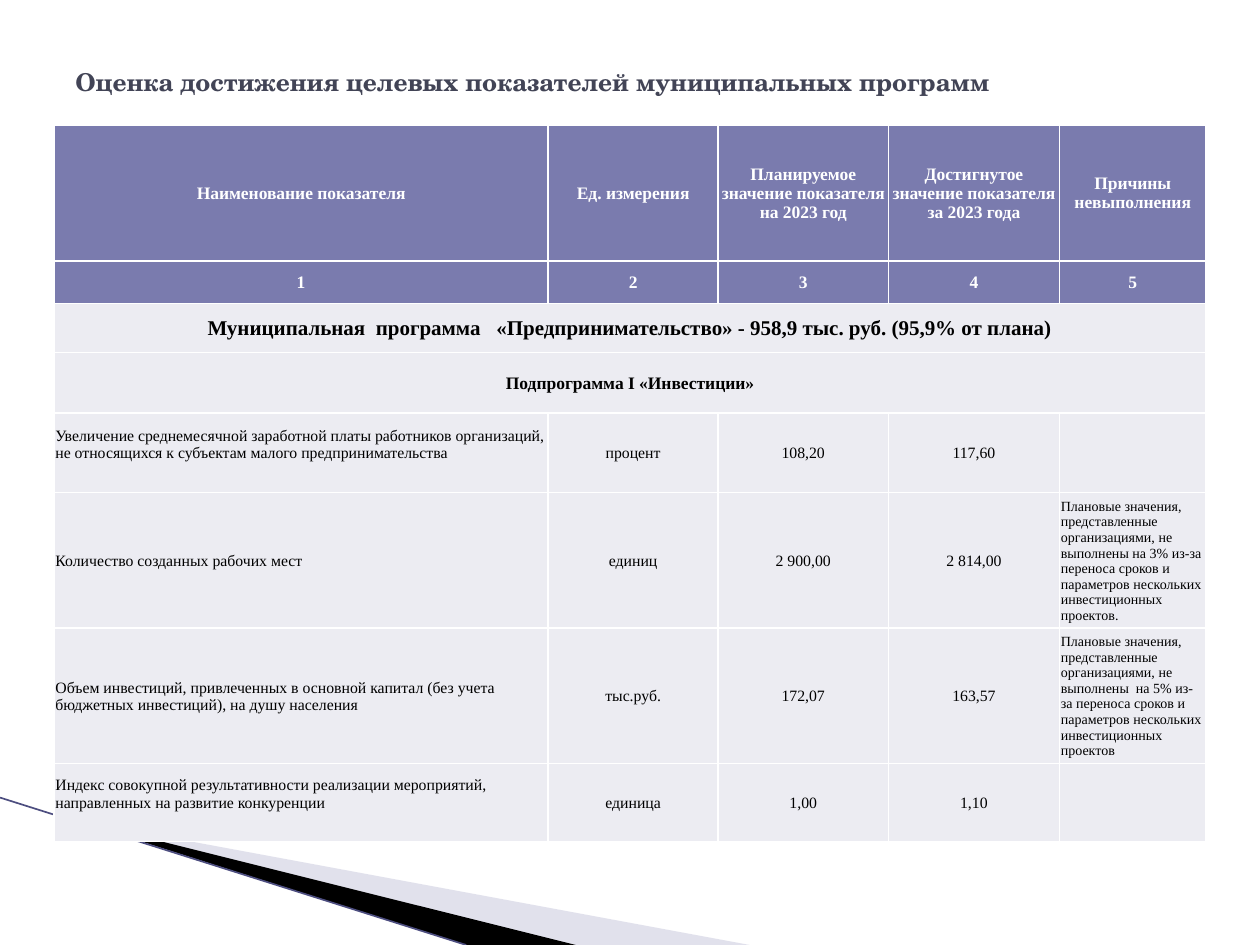
from lxml.etree import SubElement
from pptx import Presentation
from pptx.dml.color import RGBColor
from pptx.enum.text import MSO_ANCHOR, PP_ALIGN
from pptx.oxml.ns import qn
from pptx.util import Inches, Pt

COLORS = {
    "title": "424456",
    "header": "7A7BAE",
    "body": "ECECF2",
    "white": "FFFFFF",
    "black": "000000",
    "wedge": "B6B6D1",
    "edge": "4D4E80",
}
BODY_FONT = "Times New Roman"


def color(name):
    return RGBColor.from_string(COLORS[name])


def add_borders(cell):
    properties = cell._tc.get_or_add_tcPr()
    for side in ("a:lnL", "a:lnR", "a:lnT", "a:lnB"):
        line = SubElement(properties, qn(side), w=str(Pt(1)))
        fill = SubElement(line, qn("a:solidFill"))
        SubElement(fill, qn("a:srgbClr"), val=COLORS["white"])


presentation = Presentation()
presentation.slide_width = Inches(10)
presentation.slide_height = Inches(7.5)
slide = presentation.slides.add_slide(presentation.slide_layouts[6])

# Corner wedges
wedges = [
    ("wedge", 40, [(0.55, 6.5), (5.95, 7.5), (4.56, 7.5)]),
    ("black", 100, [(0.53, 6.49), (4.57, 7.5), (3.7, 7.5)]),
]
for fill_name, opacity, points in wedges:
    start, *others = [(Inches(x), Inches(y)) for x, y in points]
    builder = slide.shapes.build_freeform(*start)
    builder.add_line_segments(others)
    shape = builder.convert_to_shape()
    shape.shadow.inherit = False
    shape.line.fill.background()
    shape.fill.solid()
    shape.fill.fore_color.rgb = color(fill_name)
    if opacity < 100:
        fill_color = shape._element.spPr.find(".//" + qn("a:srgbClr"))
        SubElement(fill_color, qn("a:alpha"), val=str(opacity * 1000))

edge = slide.shapes.add_connector(1, 0, Inches(6.33), Inches(3.7), Inches(7.5))
edge.line.color.rgb = color("edge")
edge.line.width = Pt(0.95)
SubElement(edge._element.spPr, qn("a:effectLst"))

# Title
title = slide.shapes.add_textbox(Inches(0.5), Inches(0.3), Inches(9), Inches(0.69))
title.text_frame.word_wrap = True
title.text_frame.vertical_anchor = MSO_ANCHOR.MIDDLE
paragraph = title.text_frame.paragraphs[0]
paragraph.text = "Оценка достижения целевых показателей муниципальных программ"
paragraph.font.name = "TeX Gyre Schola"
paragraph.font.size = Pt(14)
paragraph.font.bold = True
paragraph.font.color.rgb = color("title")

# Indicator table
rows = [
    ["Наименование показателя", "Ед. измерения",
     "Планируемое значение показателя на 2023 год",
     "Достигнутое значение показателя за 2023 года", "Причины невыполнения"],
    ["1", "2", "3", "4", "5"],
    ["Муниципальная  программа   «Предпринимательство» - 958,9 тыс. руб. (95,9% от плана)"],
    ["Подпрограмма I «Инвестиции»"],
    ["Увеличение среднемесячной заработной платы работников организаций, "
     "не относящихся к субъектам малого предпринимательства",
     "процент", "108,20", "117,60", ""],
    ["Количество созданных рабочих мест", "единиц", "2 900,00", "2 814,00",
     "Плановые значения, представленные организациями, не выполнены на 3% из-за "
     "переноса сроков и параметров нескольких инвестиционных проектов."],
    ["Объем инвестиций, привлеченных в основной капитал (без учета бюджетных "
     "инвестиций), на душу населения", "тыс.руб.", "172,07", "163,57",
     "Плановые значения, представленные организациями, не выполнены  на 5% из-за "
     "переноса сроков и параметров нескольких инвестиционных проектов"],
    ["Индекс совокупной результативности реализации мероприятий, "
     "направленных на развитие конкуренции", "единица", "1,00", "1,10", ""],
]
column_widths = [3.92, 1.35, 1.35, 1.36, 1.16]
row_heights = [1.08, 0.34, 0.39, 0.48, 0.63, 1, 1, 0.62]
row_sizes = [10, 10, 12, 10, 9, 9, 9, 9]
HEADER_ROWS, BOLD_ROWS = 2, 4
RAISED_ROWS = (4, 7)

table = slide.shapes.add_table(
    len(rows), len(column_widths), Inches(0.43), Inches(0.99),
    Inches(sum(column_widths)), Inches(sum(row_heights))).table
for column, width in zip(table.columns, column_widths):
    column.width = Inches(width)
for row, height in zip(table.rows, row_heights):
    row.height = Inches(height)

last_column = len(column_widths) - 1
for row_index, texts in enumerate(rows):
    is_header = row_index < HEADER_ROWS
    is_bold = row_index < BOLD_ROWS
    if len(texts) == 1:
        table.cell(row_index, 0).merge(table.cell(row_index, last_column))
    for column_index in range(len(column_widths)):
        cell = table.cell(row_index, column_index)
        add_borders(cell)
        cell.fill.solid()
        cell.fill.fore_color.rgb = color("header" if is_header else "body")
        cell.vertical_anchor = MSO_ANCHOR.MIDDLE
        cell.margin_left = cell.margin_right = cell.margin_top = Inches(0.01)
        cell.margin_bottom = 0
        if column_index >= len(texts):
            continue
        if column_index == 0 and row_index in RAISED_ROWS:
            cell.margin_bottom = Inches(0.14)
        is_reason = column_index == last_column and not is_bold
        is_left = not is_bold and column_index in (0, last_column)
        paragraph = cell.text_frame.paragraphs[0]
        paragraph.text = texts[column_index]
        paragraph.alignment = PP_ALIGN.LEFT if is_left else PP_ALIGN.CENTER
        paragraph.font.name = BODY_FONT
        paragraph.font.size = Pt(8 if is_reason else row_sizes[row_index])
        paragraph.font.bold = is_bold
        paragraph.font.color.rgb = color("white" if is_header else "black")

presentation.save("out.pptx")
